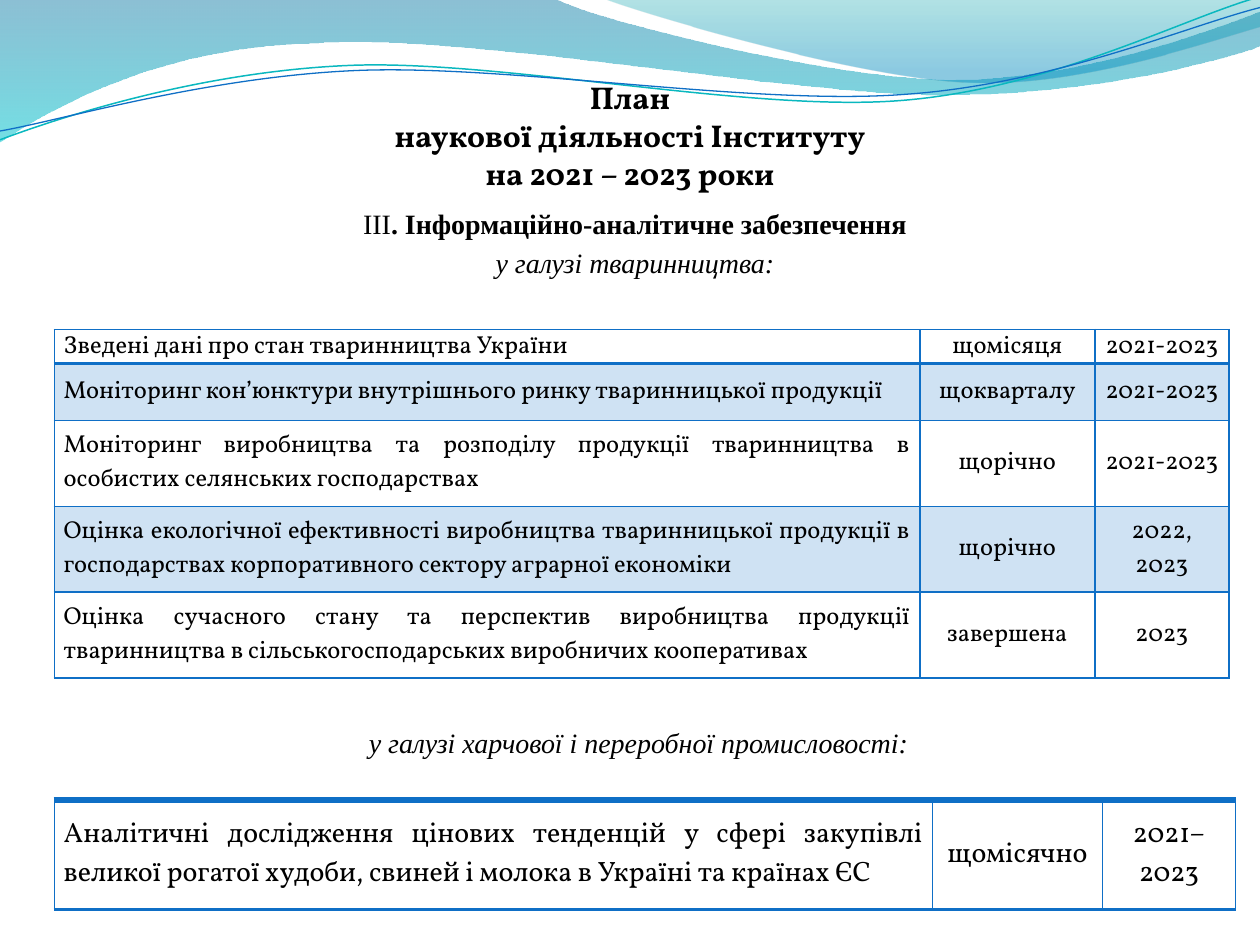
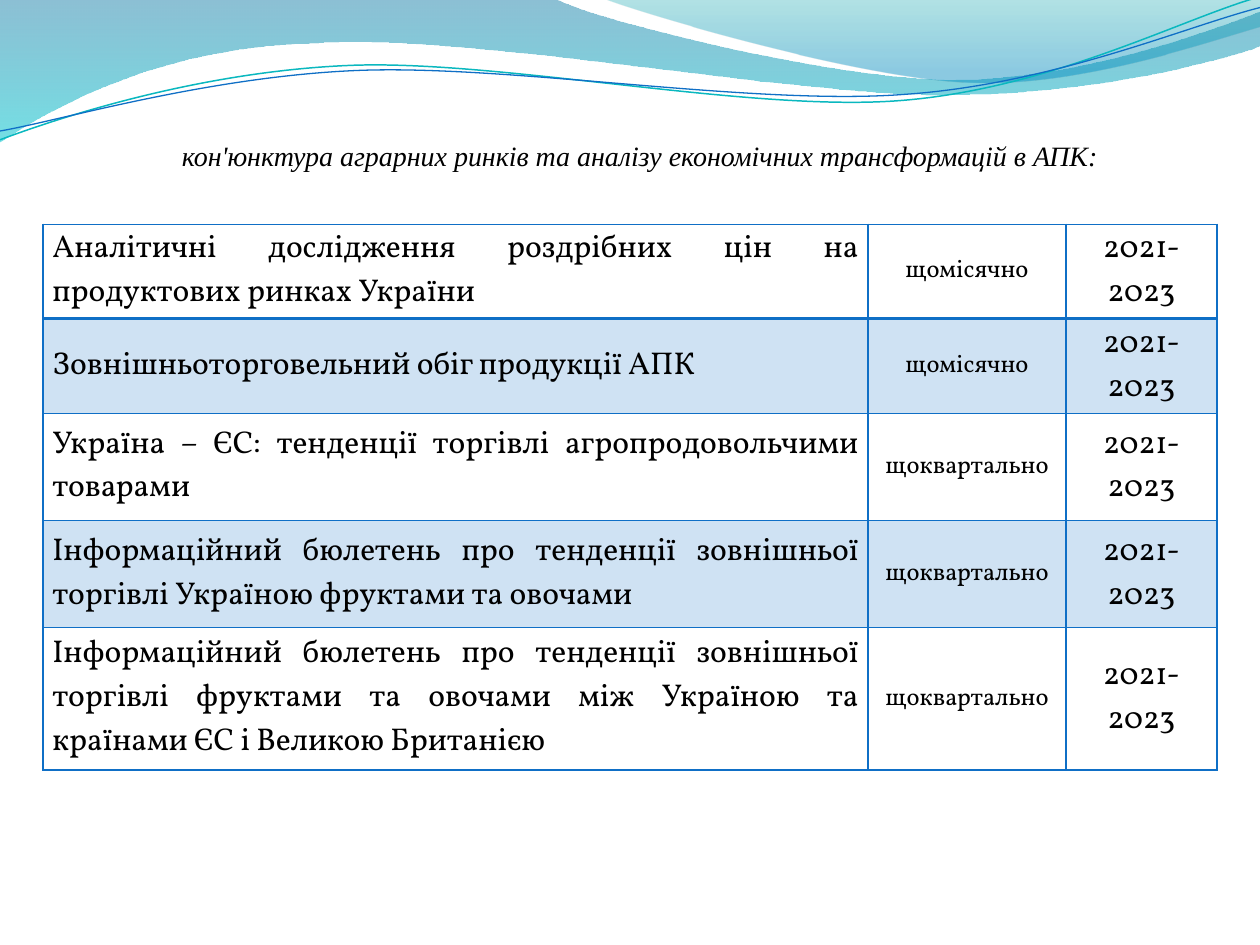
from lxml import etree
from pptx import Presentation
from pptx.dml.color import RGBColor
from pptx.enum.text import MSO_ANCHOR, MSO_AUTO_SIZE, PP_ALIGN
from pptx.oxml.ns import qn
from pptx.util import Pt

CENTER, JUSTIFY = PP_ALIGN.CENTER, PP_ALIGN.JUSTIFY
MIDDLE, TOP = MSO_ANCHOR.MIDDLE, MSO_ANCHOR.TOP
NO_AUTOFIT = MSO_AUTO_SIZE.NONE

BLACK = RGBColor(0x00, 0x00, 0x00)
BLUE = RGBColor(0x0F, 0x6F, 0xC6)
TEAL = RGBColor(0x0A, 0xB8, 0xBF)
DEEP_BLUE = RGBColor(0x00, 0x74, 0xA1)
AQUA = RGBColor(0x00, 0xC6, 0xCF)
SEA_GREEN = RGBColor(0x00, 0xA1, 0xA9)
SKY_BLUE = RGBColor(0x00, 0x8B, 0xBF)

BODY_FONT, HEADING_FONT = "Vollkorn", "Times New Roman"
TITLE_ONLY = 5
POINTS_PER_INCH = 72
BAND_ALPHA = 20

# Waves in inches: a start point, then lines (1 point) and curves (3 points)
WIDE_WAVE = [[(0, 0)], [(4.4, -0.01)],
             [(4.76, 0.17), (6.64, 0.63), (7.58, 0.63)],
             [(8.53, 0.63), (9.58, 0.26), (10, 0.09)], [(10.01, 0.36)],
             [(9.83, 0.44), (8.7, 0.76), (7.46, 0.75)],
             [(6.22, 0.75), (3.82, 0.28), (2.57, 0.34)],
             [(1.29, 0.36), (0.46, 0.83), (-0.01, 1.13)], [(0, 0)]]
RIGHT_WAVE = [[(4.79, -0.01)], [(5.09, 0.11), (6.82, 0.62), (7.69, 0.65)],
              [(8.56, 0.69), (9.61, 0.32), (10, 0.21)], [(10, 0)],
              [(4.79, -0.01)]]
TEAL_LINE = [[(0, 1.11)], [(0.48, 0.93), (1.58, 0.57), (2.77, 0.52)],
             [(3.95, 0.47), (5.93, 0.89), (7.13, 0.8)],
             [(8.33, 0.71), (9.38, 0.15), (9.98, -0.02)]]
BLUE_LINE = [[(0, 1.04)], [(0.47, 0.96), (1.64, 0.61), (2.83, 0.56)],
             [(4.03, 0.51), (5.97, 0.84), (7.17, 0.75)],
             [(8.36, 0.67), (9.41, 0.21), (10, 0.06)]]

LIVESTOCK_ROWS = [
    ("Зведені дані про стан тваринництва України", "щомісяця", "2021-2023"),
    ("Моніторинг кон’юнктури внутрішнього ринку тваринницької продукції",
     "щокварталу", "2021-2023"),
    ("Моніторинг виробництва та розподілу продукції тваринництва в особистих "
     "селянських господарствах", "щорічно", "2021-2023"),
    ("Оцінка екологічної ефективності виробництва тваринницької продукції в "
     "господарствах корпоративного сектору аграрної економіки",
     "щорічно", "2022, 2023"),
    ("Оцінка сучасного стану та перспектив виробництва продукції тваринництва "
     "в сільськогосподарських виробничих кооперативах", "завершена", "2023"),
]
FOOD_ROWS = [
    ("Аналітичні дослідження цінових тенденцій у сфері закупівлі великої "
     "рогатої худоби, свиней і молока в Україні та країнах ЄС",
     "щомісячно", "2021–2023"),
]
MARKET_ROWS = [
    ("Аналітичні дослідження роздрібних цін на продуктових ринках України",
     "щомісячно", "2021-2023"),
    ("Зовнішньоторговельний обіг продукції АПК", "щомісячно", "2021-2023"),
    ("Україна – ЄС: тенденції торгівлі агропродовольчими товарами",
     "щоквартально", "2021-2023"),
    ("Інформаційний бюлетень про тенденції зовнішньої торгівлі Україною "
     "фруктами та овочами", "щоквартально", "2021-2023"),
    ("Інформаційний бюлетень про тенденції зовнішньої торгівлі фруктами та "
     "овочами між Україною та країнами ЄС і Великою Британією",
     "щоквартально", "2021-2023"),
]


def set_alpha(parent, percent):
    """Make every colour below the given element partly transparent."""
    for color in parent.iter(qn("a:srgbClr")):
        etree.SubElement(color, qn("a:alpha")).set("val", str(percent * 1000))


def set_font(paragraph, name, size, bold=False, italic=False):
    font = paragraph.font
    font.name, font.size = name, Pt(size)
    font.bold, font.italic = bold, italic
    font.color.rgb = BLACK


# Wave band shared by all slides
def bend_segments(shape, wave):
    """Join the three lines that stand for each curve into one Bezier."""
    lines = iter(list(shape._element.spPr.iter(qn("a:lnTo"))))
    for segment in wave[1:]:
        parts = [next(lines) for _ in segment]
        if len(parts) == 3:
            curve = etree.Element(qn("a:cubicBezTo"))
            parts[0].addprevious(curve)
            for part in parts:
                curve.append(part[0])
                part.getparent().remove(part)


def draw_wave(page, wave, closed):
    points = [(Pt(x * POINTS_PER_INCH), Pt(y * POINTS_PER_INCH))
              for segment in wave for x, y in segment]
    builder = page.shapes.build_freeform(*points[0])
    builder.add_line_segments(points[1:], close=closed)
    shape = builder.convert_to_shape()
    bend_segments(shape, wave)
    shape.shadow.inherit = False
    return shape


def filled_wave(page, wave, stops):
    shape = draw_wave(page, wave, True)
    shape.line.fill.background()
    shape.fill.gradient()
    shape.fill.gradient_angle = 270
    for stop, (position, color, alpha) in zip(shape.fill.gradient_stops, stops):
        stop.position = position
        stop.color.rgb = color
        set_alpha(stop.color._xFill, alpha)
    return shape


def line_wave(page, wave, color, width):
    shape = draw_wave(page, wave, False)
    shape.fill.background()
    shape.line.color.rgb = color
    shape.line.width = Pt(width)
    return shape


def add_wave_band(page):
    """Draw the waves and move them behind everything on the layout."""
    waves = [
        filled_wave(page, WIDE_WAVE, [(0, DEEP_BLUE, 45), (1, AQUA, 55)]),
        filled_wave(page, RIGHT_WAVE,
                    [(0, SEA_GREEN, 30), (0.8, SKY_BLUE, 45)]),
        line_wave(page, TEAL_LINE, TEAL, 0.85),
        line_wave(page, BLUE_LINE, BLUE, 0.75),
    ]
    layout_tree = page.slide_layout.shapes._spTree
    for index, wave in enumerate(waves):
        wave._element.nvSpPr.cNvPr.set("id", str(101 + index))
        layout_tree.insert(2 + index, wave._element)


# Headings
def place_text(shape, box, anchor):
    shape.left, shape.top, shape.width, shape.height = map(Pt, box)
    frame = shape.text_frame
    frame.word_wrap = True
    frame.auto_size = NO_AUTOFIT
    frame.vertical_anchor = anchor
    return frame


def format_section_line(paragraph, text):
    paragraph.text = text
    paragraph.alignment = CENTER
    set_font(paragraph, HEADING_FONT, 16, italic=True)


def section_heading(shape, box, text):
    paragraph = place_text(shape, box, TOP).paragraphs[0]
    format_section_line(paragraph, text)
    paragraph.line_spacing = 0.9


def add_text_box(page):
    return page.shapes.add_textbox(0, 0, 0, 0)


def plan_title(page, box):
    frame = place_text(page.shapes.title, box, MIDDLE)
    frame.text = "План\nнаукової діяльності Інституту\vна 2021 – 2023 роки"
    for paragraph in frame.paragraphs:
        paragraph.alignment = CENTER
        set_font(paragraph, BODY_FONT, 18, bold=True)


def chapter_heading(page, box):
    frame = place_text(add_text_box(page), box, TOP)
    chapter = frame.paragraphs[0]
    chapter.alignment = CENTER
    for text, bold in (("ІІІ", False),
                       (". Інформаційно-аналітичне забезпечення", True)):
        span = chapter.add_run()
        span.text = text
        span.font.bold = bold
    set_font(chapter, HEADING_FONT, 16)
    section = frame.add_paragraph()
    format_section_line(section, "у галузі тваринництва:")
    section.space_before = Pt(3.2)


# Tables
def set_borders(cell, top, bottom):
    properties = cell._tc.get_or_add_tcPr()
    for side, width in (("L", 1), ("R", 1), ("T", top), ("B", bottom)):
        line = etree.SubElement(properties, qn(f"a:ln{side}"), w=str(Pt(width)))
        fill = etree.SubElement(line, qn("a:solidFill"))
        etree.SubElement(fill, qn("a:srgbClr"), val=str(BLUE))


def fill_cell(cell, text, size, alignment, banded):
    cell.margin_left = cell.margin_right = Pt(5.4)
    cell.margin_top = cell.margin_bottom = 0
    cell.vertical_anchor = MIDDLE
    if banded:
        cell.fill.solid()
        cell.fill.fore_color.rgb = BLUE
        set_alpha(cell._tc.tcPr.find(qn("a:solidFill")), BAND_ALPHA)
    else:
        cell.fill.background()
    paragraph = cell.text_frame.paragraphs[0]
    paragraph.text = text
    paragraph.alignment = alignment
    set_font(paragraph, BODY_FONT, size)


def plan_table(page, left, top, widths, heights, rows, sizes, top_border=1):
    table = page.shapes.add_table(
        len(rows), len(widths), Pt(left), Pt(top),
        Pt(sum(widths)), Pt(sum(heights))).table
    table.first_row = table.horz_banding = False
    for column, width in zip(table.columns, widths):
        column.width = Pt(width)
    for row_index, (texts, height) in enumerate(zip(rows, heights)):
        table.rows[row_index].height = Pt(height)
        # A heavier rule runs under the first row
        above = (top_border, 2)[row_index] if row_index < 2 else 1
        below = 2 if row_index == 0 else 1
        for column_index, (text, size) in enumerate(zip(texts, sizes)):
            cell = table.cell(row_index, column_index)
            set_borders(cell, above, below)
            fill_cell(cell, text, size, CENTER if column_index else JUSTIFY,
                      banded=row_index % 2 == 1)


# Slides
def plan_slide(page):
    plan_title(page, (172.8, 43.2, 374.4, 67.7))
    chapter_heading(page, (25.6, 114.5, 674.6, 70.6))
    plan_table(page, 31, 188.4, (494.6, 100.1, 76.5),
               (16.5, 32.4, 49, 49, 49), LIVESTOCK_ROWS, (14, 14, 14))
    section_heading(add_text_box(page), (27.6, 413.3, 674.6, 25.2),
                    "у галузі харчової і переробної промисловості:")
    plan_table(page, 31, 457.2, (501.8, 97.2, 76), (62.6,),
               FOOD_ROWS, (16, 16, 16), top_border=4)


def market_slide(page):
    section_heading(
        page.shapes.title, (28.4, 77.8, 674.6, 25.2),
        "кон'юнктура аграрних ринків та аналізу економічних трансформацій в АПК:")
    plan_table(page, 24.5, 128.2, (471.6, 113, 86.4),
               (54, 54, 61.2, 61.2, 81.4), MARKET_ROWS, (18, 14, 18))


def main():
    deck = Presentation()
    deck.slide_width, deck.slide_height = Pt(720), Pt(540)
    layout = deck.slide_layouts[TITLE_ONLY]
    first_page = deck.slides.add_slide(layout)
    add_wave_band(first_page)
    plan_slide(first_page)
    market_slide(deck.slides.add_slide(layout))
    deck.save("out.pptx")


if __name__ == "__main__":
    main()
